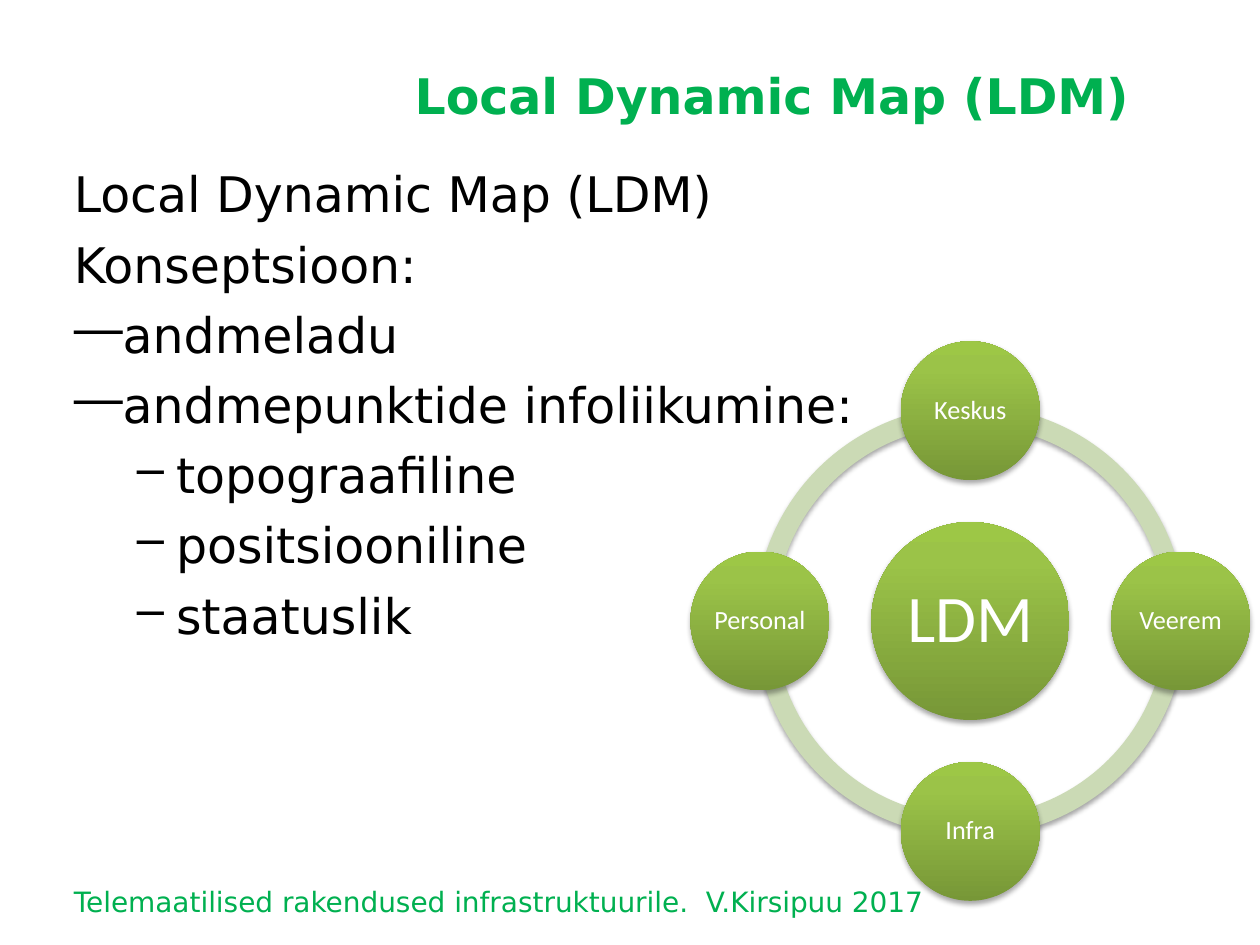
from dataclasses import dataclass
from math import cos, pi, sin

from lxml.etree import SubElement as Sub
from pptx import Presentation
from pptx.dml.color import RGBColor as Rgb
from pptx.enum.shapes import MSO_SHAPE as Kind
from pptx.enum.text import MSO_ANCHOR as Anchor, PP_ALIGN as Align
from pptx.oxml.ns import qn
from pptx.util import Cm, Pt


@dataclass(frozen=True)
class Theme:
    font: str = "DejaVu Sans"
    label: str = "Calibri"
    ink: str = "000000"
    green: str = "00B050"
    white: str = "FFFFFF"
    ring: str = "CBDAB5"
    ball: tuple = ((0, "779737"), (80, "9BC348"), (100, "9DC746"))
    big: float = 28
    foot: float = 16
    hub: float = 38
    node: float = 15


THEME = Theme()
MID = (19.56, 12.52)
ORBIT = 4.24
BODY = (
    ("Local Dynamic Map (LDM)", None),
    ("Konseptsioon:", None),
    ("andmeladu", 0),
    ("andmepunktide infoliikumine:", 0),
    ("topograafiline", 1),
    ("positsiooniline", 1),
    ("staatuslik", 1),
)
BULLETS = (("—", 0.95, -0.95), ("–", 2.06, -0.79))
NODES = ("Keskus", "Veerem", "Infra", "Personal")


def add_run(para, text, size, color, font=THEME.font, bold=False):
    run = para.add_run()
    run.text = text
    run.font.name = font
    run.font.size = Pt(size)
    run.font.bold = bold
    run.font.color.rgb = Rgb.from_string(color)


def add_box(slide, left, top, width, height, anchor=Anchor.MIDDLE):
    box = slide.shapes.add_textbox(Cm(left), Cm(top), Cm(width), Cm(height))
    frame = box.text_frame
    frame.word_wrap = True
    frame.vertical_anchor = anchor
    return frame


def add_bullet(para, level):
    mark, left, hang = BULLETS[level]
    props = para._p.get_or_add_pPr()
    props.set("marL", str(Cm(left)))
    props.set("indent", str(Cm(hang)))
    Sub(props, qn("a:buChar"), char=mark)
    para.level = level


def add_body(slide):
    frame = add_box(slide, 1.24, 3.18, 22.86, 11.75, Anchor.TOP)
    for i, (text, level) in enumerate(BODY):
        para = frame.add_paragraph() if i else frame.paragraphs[0]
        if level is not None:
            add_bullet(para, level)
        if i:
            para.space_before = Pt(6.5)
        add_run(para, text, THEME.big, THEME.ink)


def add_shadow(shape):
    shape.shadow.inherit = False
    effects = shape._element.spPr.find(qn("a:effectLst"))
    outer = Sub(effects, qn("a:outerShdw"), blurRad=str(Pt(3.1)),
                dist=str(Pt(1.8)), dir="5400000", rotWithShape="0")
    color = Sub(outer, qn("a:srgbClr"), val="000000")
    Sub(color, qn("a:alpha"), val="35000")


def add_round(slide, kind, center, size):
    left, top = (Cm(axis - size / 2) for axis in center)
    shape = slide.shapes.add_shape(kind, left, top, Cm(size), Cm(size))
    shape.line.fill.background()
    add_shadow(shape)
    return shape


def add_arc(slide, index):
    arc = add_round(slide, Kind.BLOCK_ARC, MID, 8.69)
    arc.fill.solid()
    arc.fill.fore_color.rgb = Rgb.from_string(THEME.ring)
    quarter = 54
    arc.adjustments[0] = quarter * index
    arc.adjustments[1] = quarter * ((index + 1) % 4)
    arc.adjustments[2] = 0.046


def shade(shape):
    shape.fill.gradient()
    shape.fill.gradient_angle = 90
    stops = shape._element.spPr.find(qn("a:gradFill")).find(qn("a:gsLst"))
    for stop in list(stops):
        stops.remove(stop)
    for place, color in THEME.ball:
        stop = Sub(stops, qn("a:gs"), pos=str(place * 1000))
        Sub(stop, qn("a:srgbClr"), val=color)


def add_ball(slide, center, size, text, points, inset):
    ball = add_round(slide, Kind.OVAL, center, size)
    shade(ball)
    frame = ball.text_frame
    frame.word_wrap = True
    frame.vertical_anchor = Anchor.MIDDLE
    frame.margin_left = frame.margin_right = Cm(inset)
    frame.margin_top = frame.margin_bottom = Cm(inset)
    para = frame.paragraphs[0]
    para.alignment = Align.CENTER
    para.line_spacing = 0.9
    add_run(para, text, points, THEME.white, THEME.label)


def add_wheel(slide):
    for index in (2, 1, 0, 3):
        add_arc(slide, index)
    add_ball(slide, MID, 3.99, "LDM", THEME.hub, 0.13)
    for i, name in enumerate(NODES):
        turn = i * pi / 2
        center = (MID[0] + ORBIT * sin(turn), MID[1] - ORBIT * cos(turn))
        add_ball(slide, center, 2.8, name, THEME.node, 0.05)


def main():
    deck = Presentation()
    deck.slide_width, deck.slide_height = Cm(25.4), Cm(19.05)
    slide = deck.slides.add_slide(deck.slide_layouts[6])
    add_body(slide)
    title = add_box(slide, 7.11, 1.04, 16.23, 1.75).paragraphs[0]
    title.alignment = Align.RIGHT
    add_run(title, "Local Dynamic Map (LDM) ", THEME.big, THEME.green, bold=True)
    foot = add_box(slide, 1.24, 17.65, 18.85, 1.02).paragraphs[0]
    add_run(foot, "Telemaatilised rakendused infrastruktuurile.  V.Kirsipuu 2017",
            THEME.foot, THEME.green)
    add_wheel(slide)
    deck.save("out.pptx")


if __name__ == "__main__":
    main()
